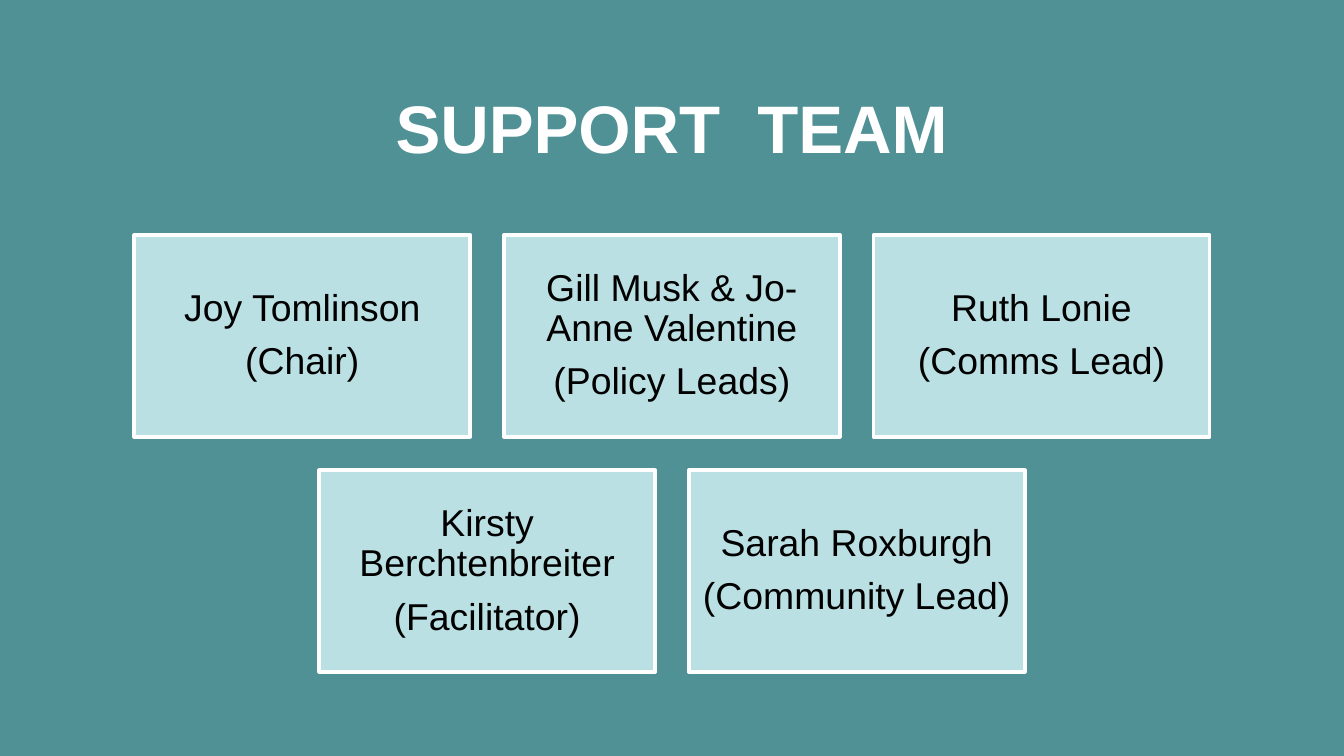
"""Build the support team slide: a title above centred rows of name cards."""
from pptx import Presentation
from pptx.dml.color import RGBColor
from pptx.enum import shapes, text
from pptx.util import Inches, Pt

TITLE = "SUPPORT  TEAM"
ROWS = [
    [("Joy Tomlinson", "(Chair)"),
     ("Gill Musk & Jo-Anne Valentine", "(Policy Leads)"),
     ("Ruth Lonie", "(Comms Lead)")],
    [("Kirsty Berchtenbreiter", "(Facilitator)"),
     ("Sarah Roxburgh", "(Community Lead)")],
]
COLORS = {"back": "509195", "card": "BBE0E3", "white": "FFFFFF", "ink": "000000"}
WIDE = 10
HIGH = WIDE * 9 / 16
CARD_W, CARD_H, GAP, TOP, PAD = 2.5, 1.5, 0.25, 1.75, 0.08


def color(name):
    """Return the named colour."""
    return RGBColor.from_string(COLORS[name])


def write(frame, lines, size, ink, bold=False):
    """Fill a text frame with centred lines."""
    frame.word_wrap = True
    frame.vertical_anchor = text.MSO_ANCHOR.MIDDLE
    frame.text = "\n".join(lines)
    for para in frame.paragraphs:
        para.alignment = text.PP_ALIGN.CENTER
        font = para.font
        font.name, font.size, font.bold = "Arial", Pt(size), bold
        font.color.rgb = color(ink)


def add_card(slide, left, top, lines):
    """Draw one card with a name and a role."""
    card = slide.shapes.add_shape(
        shapes.MSO_SHAPE.RECTANGLE,
        Inches(left), Inches(top), Inches(CARD_W), Inches(CARD_H))
    card.shadow.inherit = False
    card.fill.solid()
    card.fill.fore_color.rgb = color("card")
    card.line.color.rgb = color("white")
    card.line.width = Pt(2)
    frame = card.text_frame
    frame.margin_left = frame.margin_right = Inches(PAD)
    frame.margin_top = frame.margin_bottom = Inches(PAD)
    write(frame, lines, 20, "ink")
    for para in frame.paragraphs:
        para.line_spacing = 0.9
        para.space_after = Pt(7)


def main():
    """Build and save the slide."""
    deck = Presentation()
    deck.slide_width, deck.slide_height = Inches(WIDE), Inches(HIGH)
    slide = deck.slides.add_slide(deck.slide_layouts[6])
    slide.background.fill.solid()
    slide.background.fill.fore_color.rgb = color("back")

    title = slide.shapes.add_textbox(
        Inches(0.75), Inches(0.63), Inches(8.5), Inches(0.62))
    write(title.text_frame, [TITLE], 36, "white", bold=True)

    for row, team in enumerate(ROWS):
        span = len(team) * (CARD_W + GAP) - GAP
        for col, lines in enumerate(team):
            left = (WIDE - span) / 2 + col * (CARD_W + GAP)
            add_card(slide, left, TOP + row * (CARD_H + GAP), lines)

    deck.save("out.pptx")


if __name__ == "__main__":
    main()
